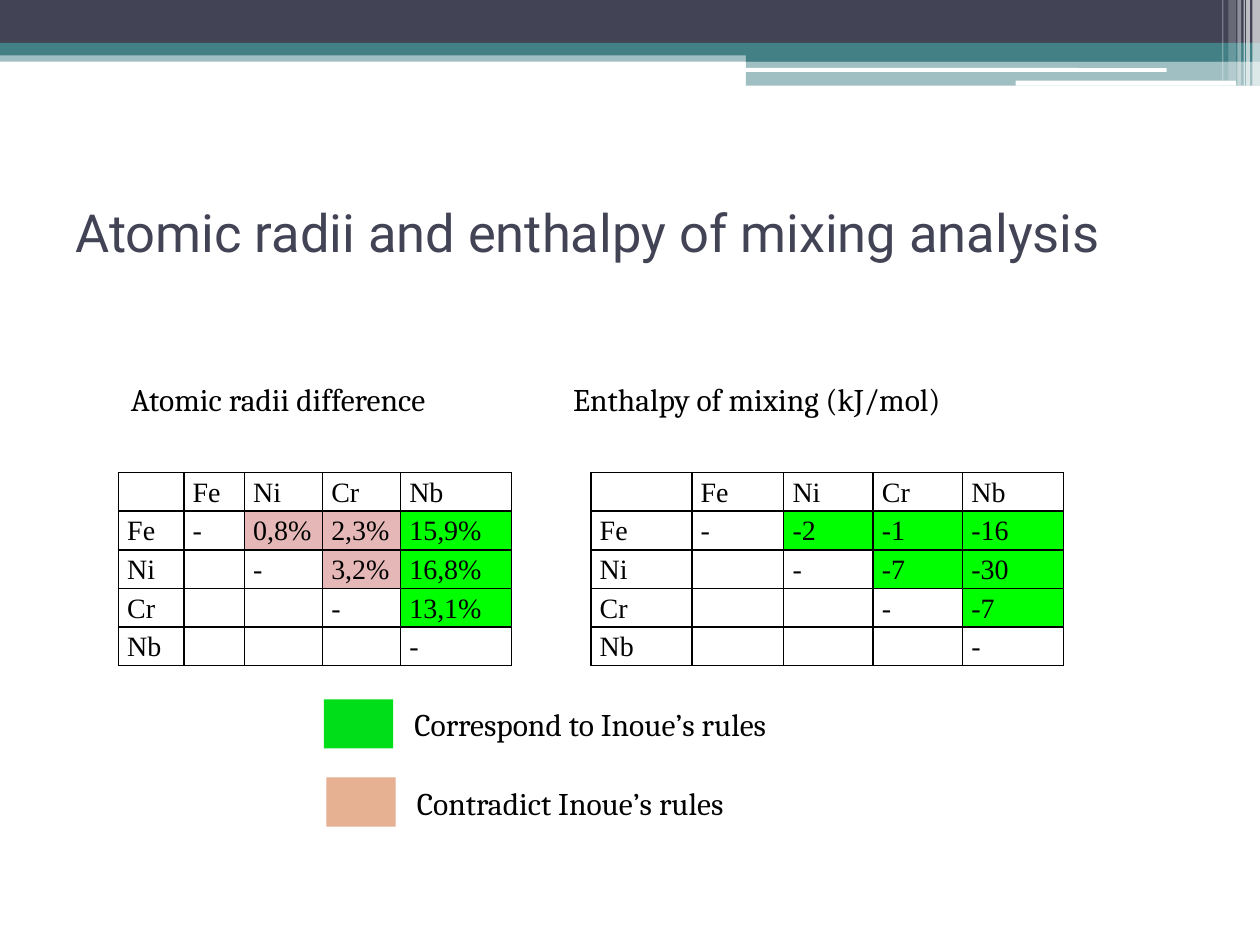
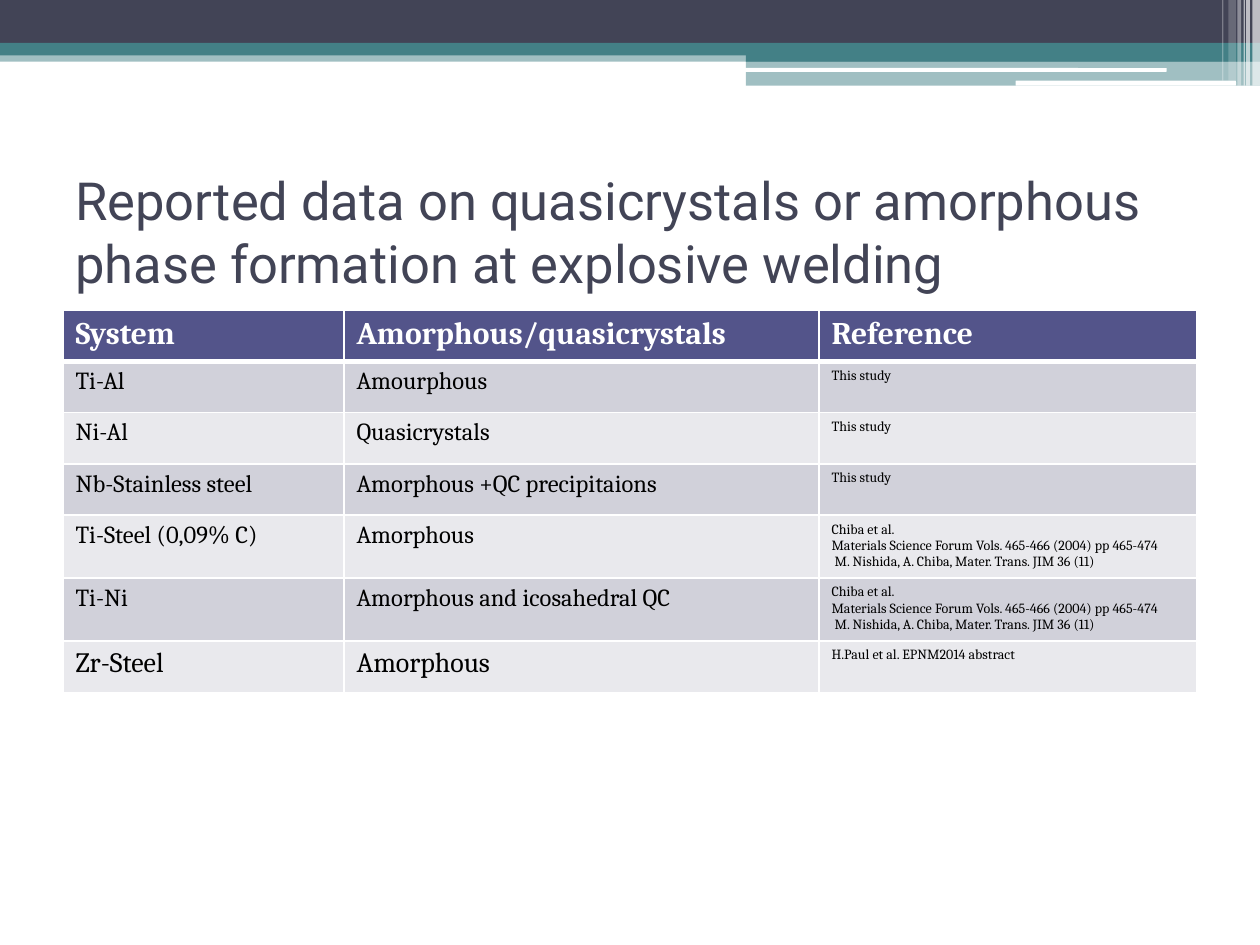
import dataclasses
import typing

import lxml.etree
import pptx
import pptx.dml.color
import pptx.enum.shapes
import pptx.enum.text
import pptx.oxml.ns
import pptx.util

SHAPES = pptx.enum.shapes.MSO_SHAPE
ANCHORS = pptx.enum.text.MSO_ANCHOR
WIDTH, HEIGHT = pptx.util.Inches(10), pptx.util.Inches(7.5)
COLUMN, ROW = WIDTH / 100, HEIGHT / 75

INK, TEAL, WHITE, BLACK = "424456", "438086", "FFFFFF", "000000"
HEADER, BAND_DARK, BAND_LIGHT = "53548A", "D1D1DA", "E9E9ED"
MATCH, CLASH = "00FF00", "E5B8B7"
BODY_FONT, TITLE_FONT, MATRIX_FONT = "Cambria", "Roboto", "Times New Roman"


@dataclasses.dataclass(frozen=True)
class Area:
    column: float
    row: float
    columns: float
    rows: float

    def lengths(self) -> tuple[int, int, int, int]:
        return (round(self.column * COLUMN), round(self.row * ROW),
                round(self.columns * COLUMN), round(self.rows * ROW))


@dataclasses.dataclass(frozen=True)
class Block:
    area: Area
    fill: str
    opacity: int = 100
    rounded: bool = False


@dataclasses.dataclass(frozen=True)
class TextStyle:
    font: str
    size: float
    colour: str = BLACK
    bold: bool = False
    line_spacing: float = 1.0


@dataclasses.dataclass(frozen=True)
class Cell:
    text: str
    style: TextStyle
    fill: str | None = None
    bottom_line: float = 1


@dataclasses.dataclass(frozen=True)
class TableLook:
    border: str
    side_margin: float
    end_margin: float


@dataclasses.dataclass(frozen=True)
class Matrix:
    caption: str
    caption_area: Area
    column: float
    column_widths: list[float]
    upper_values: list[list[str]]
    follows_rule: typing.Callable[[str], bool]


@dataclasses.dataclass(frozen=True)
class LegendEntry:
    column: float
    row: float
    colour: str
    label: str


TITLE_STYLE = TextStyle(TITLE_FONT, 30, INK)
CAPTION_STYLE = TextStyle(BODY_FONT, 18)
MATRIX_STYLE = TextStyle(MATRIX_FONT, 16, line_spacing=1.15)
HEADER_STYLE = TextStyle(BODY_FONT, 18, WHITE, bold=True)
REFERENCE_STYLE = TextStyle(BODY_FONT, 8)
TITLE_AREA = Area(5, 12.5, 90, 11.7)
MATRIX_LOOK = TableLook(BLACK, 0.7, 0)
REPORT_LOOK = TableLook(WHITE, 1, 0.5)

TOP_BANDS = [
    Block(Area(0, 4, 100, 0.9), TEAL, 50),
    Block(Area(0, 0, 100, 3.4), INK),
    Block(Area(0, 3.4, 100, 1), TEAL),
    Block(Area(59.2, 3.9, 40.8, 1), TEAL),
    Block(Area(59.2, 4.8, 40.8, 2), TEAL, 50),
    Block(Area(59.1, 5.4, 33.5, 0.3), WHITE, rounded=True),
    Block(Area(80.6, 6.4, 17.5, 0.4), WHITE, rounded=True),
] + [
    Block(Area(column, 0, columns, rows), WHITE, opacity)
    for column, columns, rows, opacity in (
        (99.4, 0.6, 6.8, 65), (98.9, 0.3, 6.8, 65), (98.7, 0.1, 6.8, 60),
        (98.2, 0.3, 6.8, 40), (97.5, 0.6, 6.4, 20), (97, 0.1, 6.4, 30))
]

ELEMENTS = ["Fe", "Ni", "Cr", "Nb"]
MATRICES = [
    Matrix("Atomic radii difference", Area(9.4, 29.7, 30.5, 4), 9.4,
           [5.2, 4.8, 6.2, 6.2, 8.8],
           [["0,8%", "2,3%", "15,9%"], ["3,2%", "16,8%"], ["13,1%"], []],
           lambda value: float(value.rstrip("%").replace(",", ".")) > 12),
    Matrix("Enthalpy of mixing (kJ/mol)", Area(44.5, 29.7, 34.4, 4), 46.9,
           [8, 7.3, 7.1, 7.1, 8],
           [["-2", "-1", "-16"], ["-7", "-30"], ["-7"], []],
           lambda value: float(value) < 0),
]
LEGEND = [
    LegendEntry(25.7, 55.5, "00DE1A", "Correspond to Inoue’s rules"),
    LegendEntry(25.9, 61.7, "E6B092", "Contradict Inoue’s rules"),
]

CHIBA = ("Chiba et al.\n"
         "Materials Science Forum Vols. 465-466 (2004) pp 465-474\n"
         " M. Nishida, A. Chiba, Mater. Trans. JIM 36 (11)")
REPORT_HEADINGS = ["System", "Amorphous/quasicrystals", "Reference"]
REPORTS = [
    ("Ti-Al", "Amourphous", "This study", 14),
    ("Ni-Al", "Quasicrystals", "This study", 14),
    ("Nb-Stainless steel", "Amorphous +QC precipitaions", "This study", 14),
    ("Ti-Steel (0,09% C)", "Amorphous", CHIBA, 14),
    ("Ti-Ni", "Amorphous and icosahedral QC", CHIBA, 14),
    ("Zr-Steel", "Amorphous", "H.Paul et al. EPNM2014 abstract", 16),
]


def colour(value: str) -> pptx.dml.color.RGBColor:
    return pptx.dml.color.RGBColor.from_string(value)


def paint(fill, value: str) -> None:
    fill.solid()
    fill.fore_color.rgb = colour(value)


def write(frame, text: str, style: TextStyle) -> None:
    frame.text = text
    for paragraph in frame.paragraphs:
        paragraph.line_spacing = style.line_spacing
        paragraph.font.name = style.font
        paragraph.font.size = pptx.util.Pt(style.size)
        paragraph.font.bold = style.bold
        paragraph.font.color.rgb = colour(style.colour)


def draw_block(page, block: Block) -> None:
    kind = SHAPES.ROUNDED_RECTANGLE if block.rounded else SHAPES.RECTANGLE
    shape = page.shapes.add_shape(kind, *block.area.lengths())
    shape.shadow.inherit = False
    shape.line.fill.background()
    paint(shape.fill, block.fill)
    if block.opacity < 100:
        tint = shape.element.spPr.find(".//" + pptx.oxml.ns.qn("a:srgbClr"))
        lxml.etree.SubElement(tint, pptx.oxml.ns.qn("a:alpha"),
                              val=str(block.opacity * 1000))


def draw_text(page, area: Area, text: str, style: TextStyle,
              anchor=ANCHORS.TOP) -> None:
    box = page.shapes.add_textbox(*area.lengths())
    box.text_frame.word_wrap = True
    box.text_frame.vertical_anchor = anchor
    write(box.text_frame, text, style)


def draw_border(table_cell, side: str, points: float, value: str) -> None:
    qn = pptx.oxml.ns.qn
    properties = table_cell._tc.get_or_add_tcPr()
    line = lxml.etree.SubElement(properties, qn("a:ln" + side),
                                 w=str(pptx.util.Pt(points)))
    solid = lxml.etree.SubElement(line, qn("a:solidFill"))
    lxml.etree.SubElement(solid, qn("a:srgbClr"), val=value)


def draw_table(page, area: Area, widths: list[float],
               rows: list[list[Cell]], look: TableLook) -> None:
    frame = page.shapes.add_table(len(rows), len(widths), *area.lengths())
    table = frame.table
    table.first_row = table.horz_banding = False
    for table_column, width in zip(table.columns, widths):
        table_column.width = round(width * COLUMN)
    for row_index, row in enumerate(rows):
        above = rows[row_index - 1][0].bottom_line if row_index else 1
        for column_index, cell in enumerate(row):
            table_cell = table.cell(row_index, column_index)
            table_cell.margin_left = table_cell.margin_right = round(look.side_margin * COLUMN)
            table_cell.margin_top = table_cell.margin_bottom = round(look.end_margin * ROW)
            lines = {"L": 1, "R": 1, "T": above, "B": cell.bottom_line}
            for side, points in lines.items():
                draw_border(table_cell, side, points, look.border)
            if cell.fill:
                paint(table_cell.fill, cell.fill)
            else:
                table_cell.fill.background()
            write(table_cell.text_frame, cell.text, cell.style)


def matrix_rows(matrix: Matrix) -> list[list[Cell]]:
    rows = [[Cell(text, MATRIX_STYLE) for text in ["", *ELEMENTS]]]
    for index, (element, values) in enumerate(zip(ELEMENTS, matrix.upper_values)):
        plain = [element, *[""] * index, "-"]
        rows.append(
            [Cell(text, MATRIX_STYLE) for text in plain]
            + [Cell(value, MATRIX_STYLE, MATCH if matrix.follows_rule(value) else CLASH)
               for value in values])
    return rows


def report_rows() -> list[list[Cell]]:
    rows = [[Cell(text, HEADER_STYLE, HEADER, 3) for text in REPORT_HEADINGS]]
    for index, (system, phase, reference, size) in enumerate(REPORTS):
        fill = BAND_LIGHT if index % 2 else BAND_DARK
        style = TextStyle(BODY_FONT, size)
        rows.append([Cell(system, style, fill), Cell(phase, style, fill),
                     Cell(reference, REFERENCE_STYLE, fill)])
    return rows


def add_page(deck, title: str):
    page = deck.slides.add_slide(deck.slide_layouts[6])
    for band in TOP_BANDS:
        draw_block(page, band)
    draw_text(page, TITLE_AREA, title, TITLE_STYLE, ANCHORS.MIDDLE)
    return page


def build_analysis(deck) -> None:
    page = add_page(deck, "Atomic radii and enthalpy of mixing analysis")
    for matrix in MATRICES:
        draw_text(page, matrix.caption_area, matrix.caption, CAPTION_STYLE)
        area = Area(matrix.column, 37.5, sum(matrix.column_widths), 13.5)
        draw_table(page, area, matrix.column_widths, matrix_rows(matrix), MATRIX_LOOK)
    for entry in LEGEND:
        draw_block(page, Block(Area(entry.column, entry.row, 5.5, 3.9), entry.colour))
        draw_text(page, Area(entry.column + 6.2, entry.row, 32.9, 4),
                  entry.label, CAPTION_STYLE)


def build_reports(deck) -> None:
    page = add_page(deck, "Reported data on quasicrystals or amorphous "
                          "phase formation at explosive welding")
    draw_table(page, Area(5, 24.6, 90, 28.5), [22.3, 37.7, 30],
               report_rows(), REPORT_LOOK)


def main() -> None:
    deck = pptx.Presentation()
    deck.slide_width, deck.slide_height = WIDTH, HEIGHT
    build_analysis(deck)
    build_reports(deck)
    deck.save("out.pptx")


if __name__ == "__main__":
    main()
